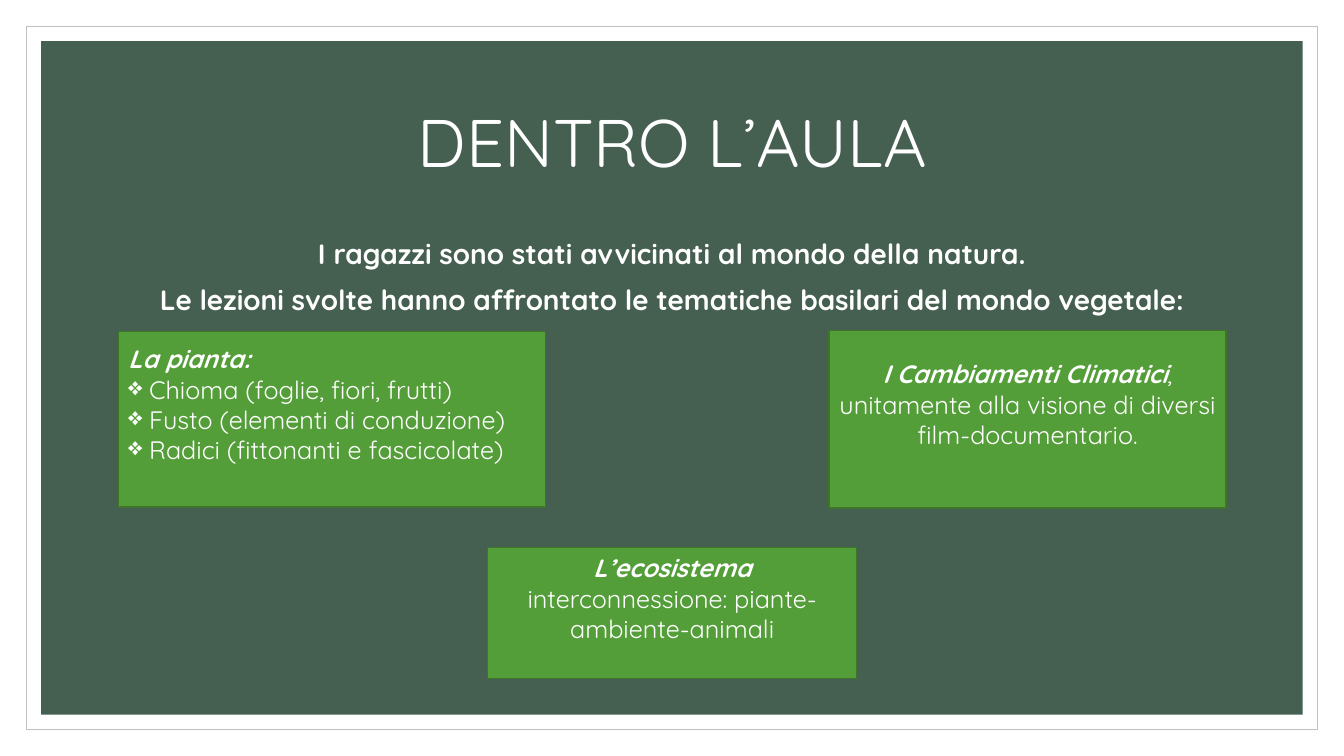
import pptx
import pptx.dml.color
import pptx.enum.shapes
import pptx.enum.text
import pptx.oxml.ns
import pptx.util
from lxml import etree

Cm = pptx.util.Cm
Pt = pptx.util.Pt
ALIGN = pptx.enum.text.PP_ALIGN
ANCHOR = pptx.enum.text.MSO_ANCHOR

FONT = "Quicksand"
WHITE = "FFFFFF"
BULLET = "❖"
BULLET_INDENT = 0.53
SLIDE_SIZE = (33.87, 19.05)

FRAMES = [
    (0.66, WHITE, "BFBFBF", 0.5),
    (1.04, "455F51", None, 0),
]

TITLE = "DENTRO L’AULA"
INTRODUCTION = [
    "I ragazzi sono stati avvicinati al mondo della natura.",
    "Le lezioni svolte hanno affrontato le tematiche basilari del mondo vegetale:",
]

TOPICS = [
    ((2.98, 8.36, 10.77, 4.42), ALIGN.LEFT, [
        [("La pianta:", True)],
        [BULLET, ("Chioma (foglie, fiori, frutti)", False)],
        [BULLET, ("Fusto (elementi di conduzione)", False)],
        [BULLET, ("Radici (fittonanti e fascicolate)", False)],
    ]),
    ((12.29, 13.8, 9.3, 3.3), ALIGN.CENTER, [
        [("L’ecosistema", True)],
        [("interconnessione: piante-ambiente-animali", False)],
    ]),
    ((20.89, 8.33, 10.01, 4.47), ALIGN.CENTER, [
        [("I Cambiamenti Climatici", True),
         (", unitamente alla visione di diversi film-documentario.", False)],
    ]),
]


def color(value):
    return pptx.dml.color.RGBColor.from_string(value)


def add_rectangle(slide, box, fill, line, line_width):
    shape = slide.shapes.add_shape(
        pptx.enum.shapes.MSO_SHAPE.RECTANGLE, *map(Cm, box))
    shape.shadow.inherit = False
    shape.fill.solid()
    shape.fill.fore_color.rgb = color(fill)
    if line:
        shape.line.color.rgb = color(line)
        shape.line.width = Pt(line_width)
    else:
        shape.line.fill.background()
    return shape


def add_bullet(paragraph):
    properties = paragraph._p.get_or_add_pPr()
    properties.set("marL", str(Cm(BULLET_INDENT)))
    properties.set("indent", str(-Cm(BULLET_INDENT)))
    bullet = etree.SubElement(properties, pptx.oxml.ns.qn("a:buChar"))
    bullet.set("char", BULLET)


def style(paragraph, size, alignment):
    paragraph.alignment = alignment
    paragraph.font.name = FONT
    paragraph.font.size = Pt(size)
    paragraph.font.color.rgb = color(WHITE)


def fill_paragraphs(frame, paragraphs, size, alignment):
    frame.word_wrap = True
    for index, parts in enumerate(paragraphs):
        paragraph = frame.add_paragraph() if index else frame.paragraphs[0]
        if parts[0] == BULLET:
            add_bullet(paragraph)
            parts = parts[1:]
        style(paragraph, size, alignment)
        for text, emphasis in parts:
            run = paragraph.add_run()
            run.text = text
            run.font.bold = run.font.italic = emphasis


def add_text(slide, box, lines, size, bold):
    frame = slide.shapes.add_textbox(*map(Cm, box)).text_frame
    fill_paragraphs(frame, [[(line, False)] for line in lines], size, ALIGN.CENTER)
    for paragraph in frame.paragraphs:
        for run in paragraph.runs:
            run.font.bold = bold
    return frame


def main():
    presentation = pptx.Presentation()
    width, height = SLIDE_SIZE
    presentation.slide_width, presentation.slide_height = Cm(width), Cm(height)
    slide = presentation.slides.add_slide(presentation.slide_layouts[6])

    for margin, fill, line, line_width in FRAMES:
        box = (margin, margin, width - 2 * margin, height - 2 * margin)
        add_rectangle(slide, box, fill, line, line_width)

    title = add_text(slide, (2.97, 1.78, 27.94, 3.81), [TITLE], 48, False)
    title.vertical_anchor = ANCHOR.MIDDLE
    title.paragraphs[0].line_spacing = 0.9

    introduction = add_text(
        slide, (2.97, 5.84, 27.94, 10.92), INTRODUCTION, 20, True)
    for paragraph in introduction.paragraphs[1:]:
        paragraph.space_before = Pt(9)

    for box, alignment, paragraphs in TOPICS:
        frame = add_rectangle(slide, box, "549E39", "3E752A", 1).text_frame
        frame.vertical_anchor = ANCHOR.MIDDLE
        frame.margin_bottom = Cm(0.89)
        fill_paragraphs(frame, paragraphs, 18, alignment)

    presentation.save("out.pptx")


if __name__ == "__main__":
    main()
